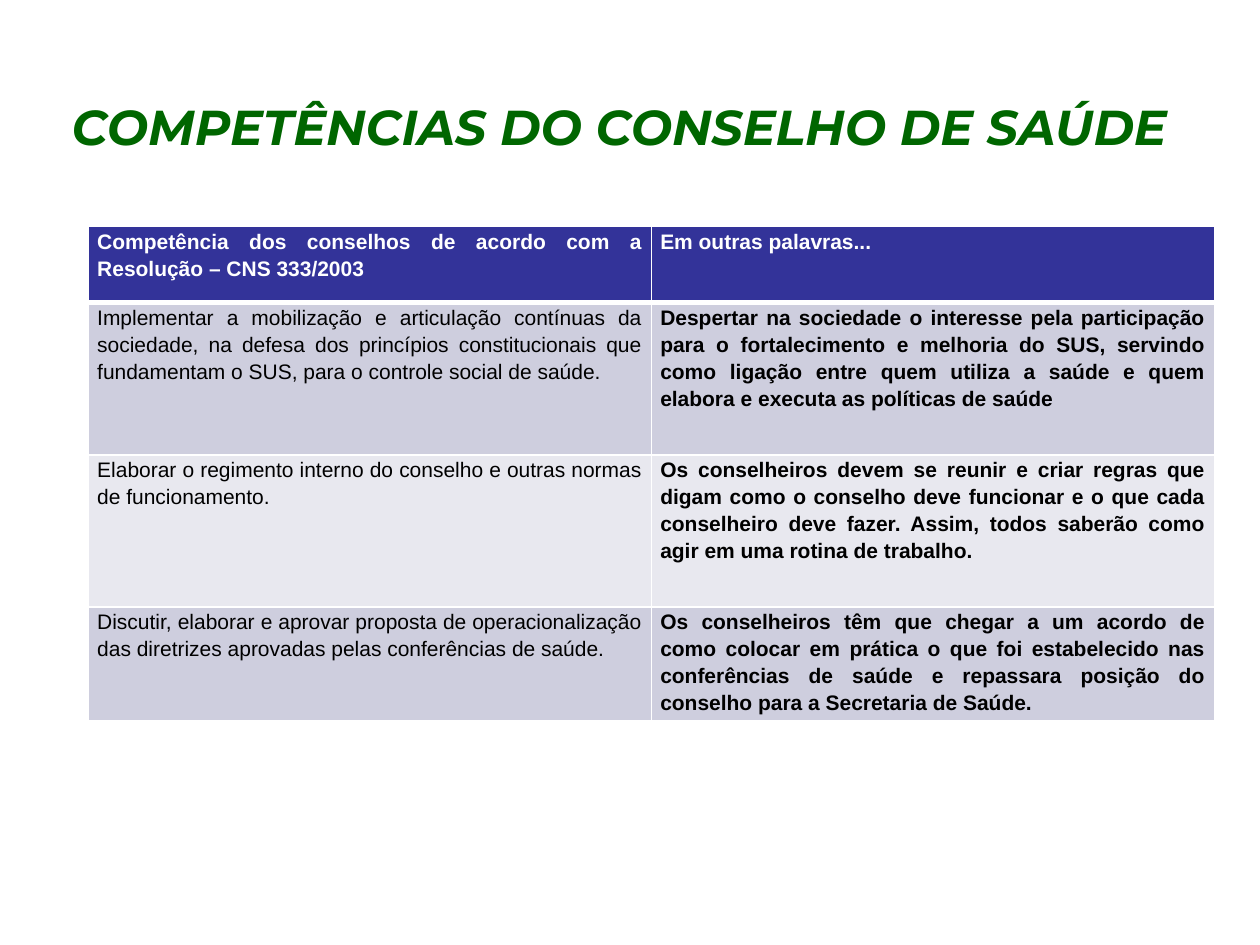
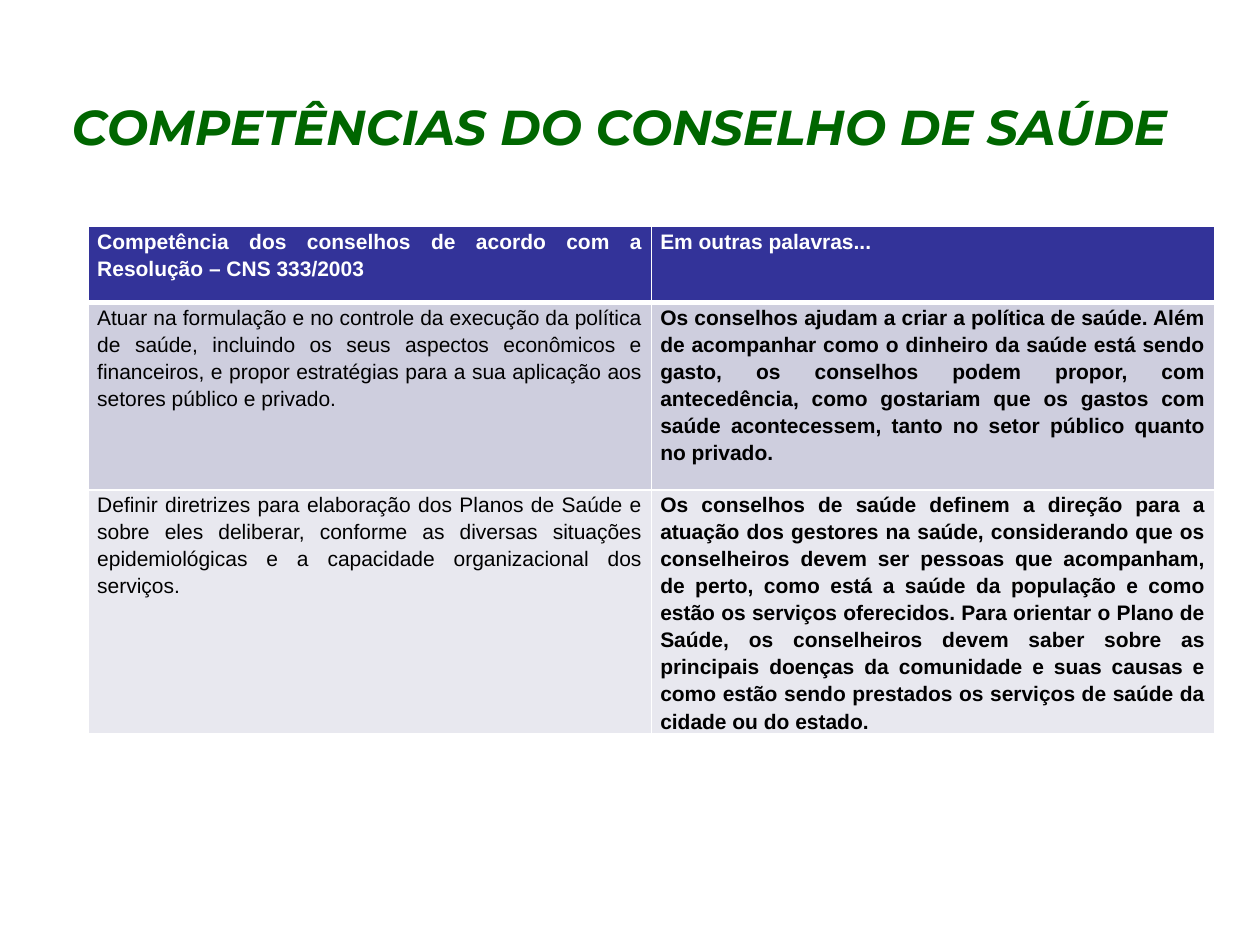
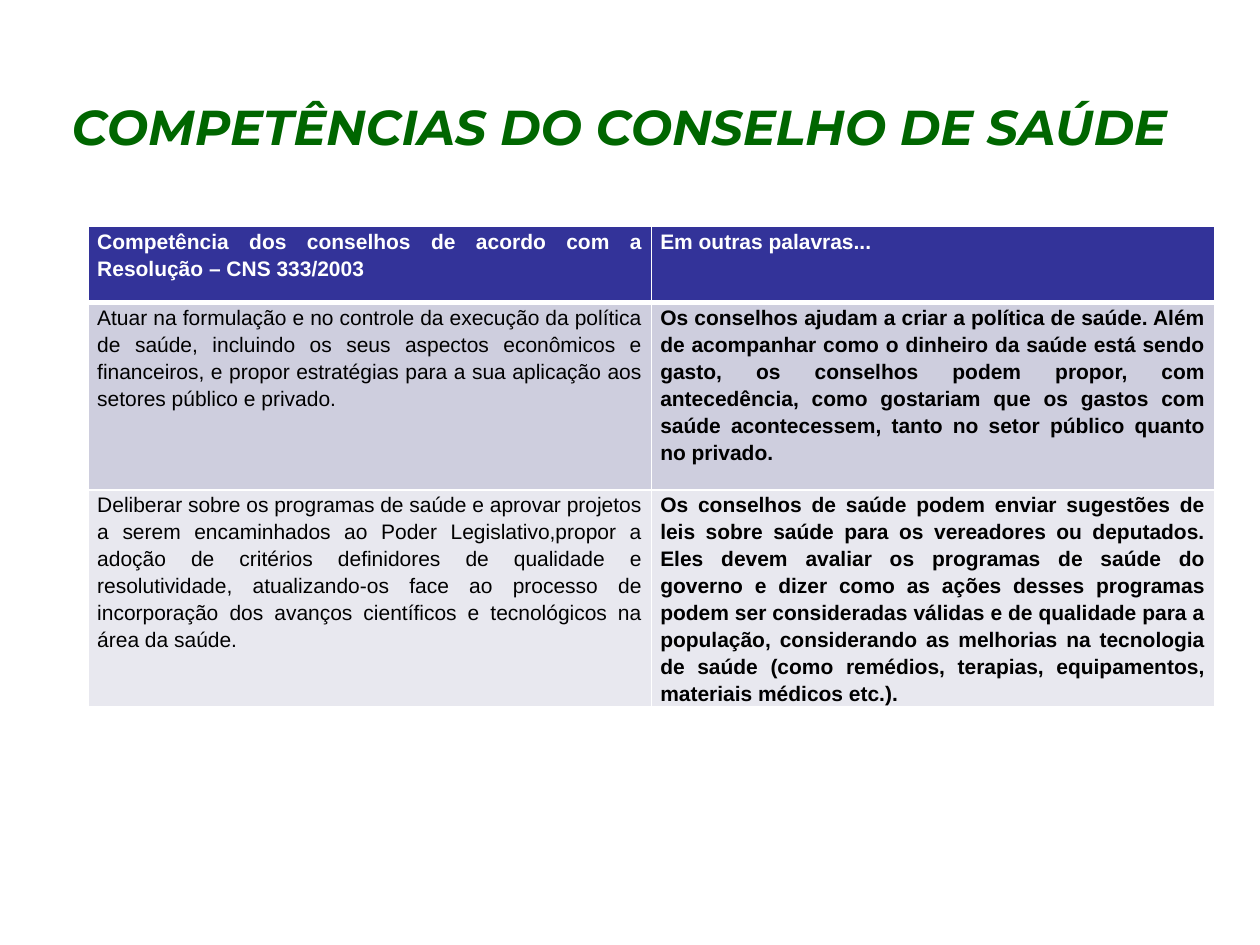
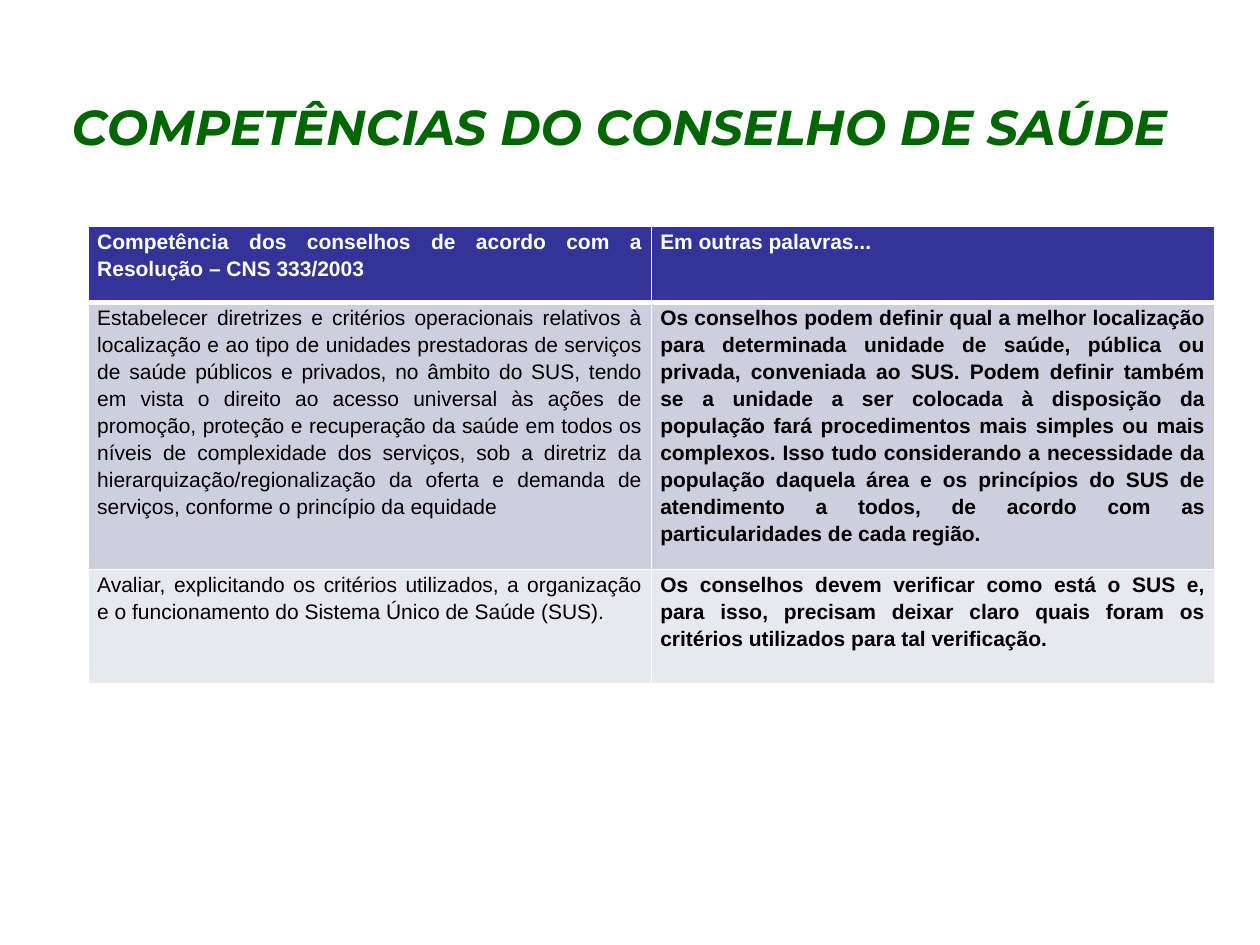
import pptx
import pptx.dml.color
import pptx.enum.text
import pptx.oxml
import pptx.oxml.ns
import pptx.util
from pptx.util import Cm

COLOURS = {
    "title": "006600",
    "header": "333399",
    "band_dark": "CECEDE",
    "band_light": "E8E8EF",
    "white": "FFFFFF",
    "black": "000000",
}
TITLE = "COMPETÊNCIAS DO CONSELHO DE SAÚDE"
HEADER = (
    "Competência dos conselhos de acordo com a Resolução – CNS 333/2003",
    "Em outras palavras...",
)
HEADER_HEIGHT = 1.53
COLUMN_WIDTH = 11.35
THIN, THICK = 1, 3

# Competence shared by two slides
POLICY_ROW = (
    3.78,
    "Atuar na formulação e no controle da execução da política de saúde, incluindo os seus "
    "aspectos econômicos e financeiros, e propor estratégias para a sua aplicação aos setores "
    "público e privado.",
    "Os conselhos ajudam a criar a política de saúde. Além de acompanhar como o dinheiro da "
    "saúde está sendo gasto, os conselhos podem propor, com antecedência, como gostariam que "
    "os gastos com saúde acontecessem, tanto no setor público quanto no privado.",
)

# One list per slide; each row is height in cm, competence, plain wording
SLIDES = [
    [
        (
            3.07,
            "Implementar a mobilização e articulação contínuas da sociedade, na defesa dos "
            "princípios constitucionais que fundamentam o SUS, para o controle social de saúde.",
            "Despertar na sociedade o interesse pela participação para o fortalecimento e "
            "melhoria do SUS, servindo como ligação entre quem utiliza a saúde e quem elabora e "
            "executa as políticas de saúde",
        ),
        (
            3.07,
            "Elaborar o regimento interno do conselho e outras normas de funcionamento.",
            "Os conselheiros devem se reunir e criar regras que digam como o conselho deve "
            "funcionar e o que cada conselheiro deve fazer. Assim, todos saberão como agir em "
            "uma rotina de trabalho.",
        ),
        (
            2.3,
            "Discutir, elaborar e aprovar proposta de operacionalização das diretrizes "
            "aprovadas pelas conferências de saúde.",
            "Os conselheiros têm que chegar a um acordo de como colocar em prática o que foi "
            "estabelecido nas conferências de saúde e repassara posição do conselho para a "
            "Secretaria de Saúde.",
        ),
    ],
    [
        POLICY_ROW,
        (
            4.9,
            "Definir diretrizes para elaboração dos Planos de Saúde e sobre eles deliberar, "
            "conforme as diversas situações epidemiológicas e a capacidade organizacional dos "
            "serviços.",
            "Os conselhos de saúde definem a direção para a atuação dos gestores na saúde, "
            "considerando que os conselheiros devem ser pessoas que acompanham, de perto, como "
            "está a saúde da população e como estão os serviços oferecidos. Para orientar o "
            "Plano de Saúde, os conselheiros devem saber sobre as principais doenças da "
            "comunidade e suas causas e como estão sendo prestados os serviços de saúde da "
            "cidade ou do estado.",
        ),
    ],
    [
        POLICY_ROW,
        (
            4.35,
            "Deliberar sobre os programas de saúde e aprovar projetos a serem encaminhados ao "
            "Poder Legislativo,propor a adoção de critérios definidores de qualidade e "
            "resolutividade, atualizando-os face ao processo de incorporação dos avanços "
            "científicos e tecnológicos na área da saúde.",
            "Os conselhos de saúde podem enviar sugestões de leis sobre saúde para os vereadores "
            "ou deputados. Eles devem avaliar os programas de saúde do governo e dizer como as "
            "ações desses programas podem ser consideradas válidas e de qualidade para a "
            "população, considerando as melhorias na tecnologia de saúde (como remédios, "
            "terapias, equipamentos, materiais médicos etc.).",
        ),
    ],
    [
        (
            5.38,
            "Estabelecer diretrizes e critérios operacionais relativos à localização e ao tipo "
            "de unidades prestadoras de serviços de saúde públicos e privados, no âmbito do SUS, "
            "tendo em vista o direito ao acesso universal às ações de promoção, proteção e "
            "recuperação da saúde em todos os níveis de complexidade dos serviços, sob a "
            "diretriz da hierarquização/regionalização da oferta e demanda de serviços, conforme "
            "o princípio da equidade",
            "Os conselhos podem definir qual a melhor localização para determinada unidade de "
            "saúde, pública ou privada, conveniada ao SUS. Podem definir também se a unidade a "
            "ser colocada à disposição da população fará procedimentos mais simples ou mais "
            "complexos. Isso tudo considerando a necessidade da população daquela área e os "
            "princípios do SUS de atendimento a todos, de acordo com as particularidades de cada "
            "região.",
        ),
        (
            2.3,
            "Avaliar, explicitando os critérios utilizados, a organização e o funcionamento do "
            "Sistema Único de Saúde (SUS).",
            "Os conselhos devem verificar como está o SUS e, para isso, precisam deixar claro "
            "quais foram os critérios utilizados para tal verificação.",
        ),
    ],
]


def colour(name):
    return pptx.dml.color.RGBColor.from_string(COLOURS[name])


def format_font(span, face, size, colour_name, bold, italic=False):
    span.font.name = face
    span.font.size = pptx.util.Pt(size)
    span.font.bold = bold
    span.font.italic = italic
    span.font.color.rgb = colour(colour_name)


def add_title(page):
    title = page.shapes.title
    title.left, title.top = Cm(1.19), Cm(0.94)
    title.width, title.height = Cm(23.11), Cm(3.18)
    frame = title.text_frame
    frame.text = TITLE
    frame.word_wrap = True
    frame.auto_size = pptx.enum.text.MSO_AUTO_SIZE.NONE
    frame.vertical_anchor = pptx.enum.text.MSO_ANCHOR.MIDDLE
    para = frame.paragraphs[0]
    para.alignment = pptx.enum.text.PP_ALIGN.LEFT
    format_font(para.runs[0], "Montserrat", 28, "title", True, True)


def set_borders(cell, top, bottom):
    """Draw white lines on all sides, with widths in points."""
    properties = cell._tc.get_or_add_tcPr()
    for side, width in (("L", THIN), ("R", THIN), ("T", top), ("B", bottom)):
        properties.append(pptx.oxml.parse_xml(
            f'<a:ln{side} {pptx.oxml.ns.nsdecls("a")} w="{pptx.util.Pt(width)}">'
            f'<a:solidFill><a:srgbClr val="{COLOURS["white"]}"/></a:solidFill>'
            f'</a:ln{side}>'
        ))


def fill_cell(cell, text, fill_name, font_name, bold):
    cell.fill.solid()
    cell.fill.fore_color.rgb = colour(fill_name)
    cell.margin_left = cell.margin_right = Cm(0.18)
    cell.margin_top = cell.margin_bottom = 0
    cell.text_frame.text = text
    para = cell.text_frame.paragraphs[0]
    para.alignment = pptx.enum.text.PP_ALIGN.JUSTIFY
    para.line_spacing = 1.15
    format_font(para.runs[0], "Arial", 12, font_name, bold)


def add_competence_table(page, competences):
    rows = [(HEADER_HEIGHT, *HEADER), *competences]
    total_height = sum(row[0] for row in rows)
    table = page.shapes.add_table(
        len(rows), 2, Cm(1.78), Cm(4.57), Cm(2 * COLUMN_WIDTH), Cm(total_height)
    ).table
    for column in table.columns:
        column.width = Cm(COLUMN_WIDTH)
    for row_index, (height, *texts) in enumerate(rows):
        table.rows[row_index].height = Cm(height)
        is_header = row_index == 0
        band = "band_dark" if row_index % 2 else "band_light"
        for column_index, text in enumerate(texts):
            cell = table.cell(row_index, column_index)
            # The thick line runs between the header and the first row
            set_borders(cell, THICK if row_index == 1 else THIN, THICK if is_header else THIN)
            fill_cell(
                cell, text,
                "header" if is_header else band,
                "white" if is_header else "black",
                is_header or column_index == 1,
            )


def main():
    deck = pptx.Presentation()
    deck.slide_width, deck.slide_height = Cm(25.4), Cm(19.05)
    title_only = deck.slide_layouts[5]
    for competences in SLIDES:
        page = deck.slides.add_slide(title_only)
        add_competence_table(page, competences)
        add_title(page)
    deck.save("out.pptx")


if __name__ == "__main__":
    main()
